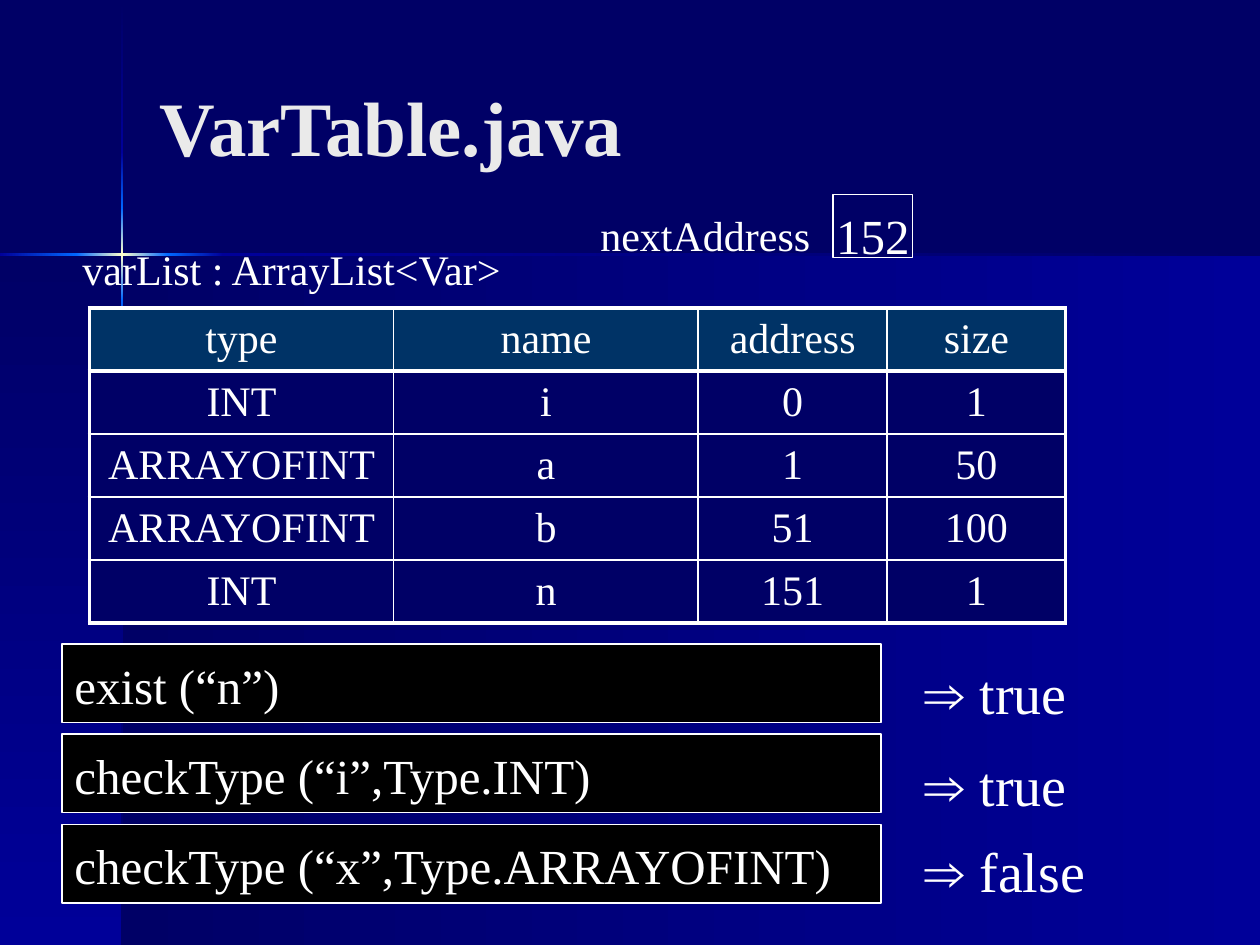
import copy
import itertools

import pptx
import pptx.dml.color
import pptx.enum.shapes
import pptx.enum.text
import pptx.oxml
import pptx.oxml.ns
import pptx.util

Pt = pptx.util.Pt
RGBColor = pptx.dml.color.RGBColor
Align = pptx.enum.text.PP_ALIGN
Anchor = pptx.enum.text.MSO_ANCHOR
RECTANGLE = pptx.enum.shapes.MSO_SHAPE.RECTANGLE

NAVY = RGBColor(0x00, 0x00, 0x66)
BLUE = RGBColor(0x00, 0x00, 0x99)
BRIGHT = RGBColor(0x00, 0x66, 0xFF)
CREAM = RGBColor(0xFF, 0xFF, 0xCC)
TEAL = RGBColor(0x00, 0x33, 0x66)
BLACK = RGBColor(0x00, 0x00, 0x00)
WHITE = RGBColor(0xFF, 0xFF, 0xFF)
SILVER = RGBColor(0xEA, 0xEA, 0xEA)
FONT = "Times New Roman"


def write(frame, text, size, color=WHITE, bold=False, align=Align.LEFT,
          anchor=Anchor.TOP, wrap=True, top=6.6, side=7.2):
    frame.word_wrap = wrap
    frame.auto_size = pptx.enum.text.MSO_AUTO_SIZE.NONE
    frame.vertical_anchor = anchor
    frame.margin_left = frame.margin_right = Pt(side)
    frame.margin_top, frame.margin_bottom = Pt(top), Pt(3.6)
    para = frame.paragraphs[0]
    para.alignment = align
    span = para.add_run()
    span.text = text
    span.font.name, span.font.size, span.font.bold = FONT, Pt(size), bold
    span.font.color.rgb = color


def add_box(left, top, width, height, colors, angle=0):
    """Add a rectangle: one colour and a white outline, or a gradient and none."""
    box = page.shapes.add_shape(RECTANGLE, Pt(left), Pt(top), Pt(width), Pt(height))
    box.shadow.inherit = False
    if len(colors) == 1:
        box.fill.solid()
        box.fill.fore_color.rgb = colors[0]
        box.line.color.rgb = WHITE
        box.line.width = Pt(0.75)
        return box
    box.line.fill.background()
    box.fill.gradient()
    box.fill.gradient_angle = angle
    stop_list = box._element.spPr.find(".//" + pptx.oxml.ns.qn("a:gsLst"))
    for _ in colors[2:]:
        stop_list.append(copy.deepcopy(stop_list[-1]))
    for index, (stop, color) in enumerate(zip(box.fill.gradient_stops, colors)):
        stop.position = index / (len(colors) - 1)
        stop.color.rgb = color
    return box


deck = pptx.Presentation()
deck.slide_width, deck.slide_height = Pt(720), Pt(540)
page = deck.slides.add_slide(deck.slide_layouts[5])
page.background.fill.solid()
page.background.fill.fore_color.rgb = NAVY

# Background panels and the glowing cross where they meet
DOWN = 270
add_box(70, 145.5, 650, 394.5, [NAVY, BLUE])
add_box(0, 145.5, 70, 394.5, [NAVY, BLUE], DOWN)
glow_colors = [[NAVY, BLUE], [BLUE, BRIGHT], [BRIGHT, CREAM, BRIGHT],
               [BRIGHT, BLUE], [BLUE, NAVY]]
column_edges = [0.75, 87, 119, 171.5, 203, 540]
row_edges = [0, 43.5, 96, 127.5, 720]
for (start, end), colors in zip(itertools.pairwise(column_edges), glow_colors):
    add_box(69.2, start, 1.4, end - start, colors, DOWN)
for (start, end), colors in zip(itertools.pairwise(row_edges), glow_colors[1:]):
    add_box(start, 144.8, end - start, 1.4, colors)

title = page.shapes.title
title.left, title.top, title.width, title.height = Pt(84), Pt(24), Pt(594), Pt(78)
write(title.text_frame, "VarTable.java", 44, color=SILVER, bold=True,
      anchor=Anchor.BOTTOM, top=3.6)
page.shapes._spTree.append(title._element)

# Variable table
rows = [
    ["type", "name", "address", "size"],
    ["INT", "i", "0", "1"],
    ["ARRAYOFINT", "a", "1", "50"],
    ["ARRAYOFINT", "b", "51", "100"],
    ["INT", "n", "151", "1"],
]
widths = [174, 174, 108, 102]
last_row, last_column = len(rows) - 1, len(widths) - 1
table = page.shapes.add_table(len(rows), len(widths), Pt(51), Pt(176),
                              Pt(sum(widths)), Pt(36 * len(rows))).table
for column, width in zip(table.columns, widths):
    column.width = Pt(width)
for r, row in enumerate(rows):
    table.rows[r].height = Pt(36)
    for c, text in enumerate(row):
        cell = table.cell(r, c)
        write(cell.text_frame, text, 24, align=Align.CENTER)
        cell.vertical_anchor = Anchor.MIDDLE
        cell.margin_top = cell.margin_bottom = Pt(3.6)
        thick_edges = {"lnL": c == 0, "lnR": c == last_column,
                       "lnT": r <= 1, "lnB": r in (0, last_row)}
        properties = cell._tc.get_or_add_tcPr()
        for edge, thick in thick_edges.items():
            properties.append(pptx.oxml.parse_xml(
                f'<a:{edge} {pptx.oxml.ns.nsdecls("a")} w="{Pt(2.25 if thick else 1)}">'
                f'<a:solidFill><a:srgbClr val="{WHITE}"/></a:solidFill></a:{edge}>'))
        cell.fill.solid()
        cell.fill.fore_color.rgb = TEAL if r == 0 else NAVY

# Next free address and method calls
address_box = add_box(476, 111, 45.5, 36, [NAVY])
write(address_box.text_frame, "152", 28, align=Align.CENTER, side=0)
calls = ["exist (“n”)", "checkType (“i”,Type.INT)", "checkType (“x”,Type.ARRAYOFINT)"]
for index, call in enumerate(calls):
    call_box = add_box(35.5, 368 + 51.5 * index, 468, 45, [BLACK])
    write(call_box.text_frame, call, 28)

labels = [
    ("varList : ArrayList<Var>", 40, 132.5, 261.5, 36, 24),
    ("nextAddress", 336, 113, 135.5, 36, 24),
    ("⇒ true", 521.5, 369.5, 105, 46, 32),
    ("⇒ true", 521.5, 422, 105, 46, 32),
    ("⇒ false", 521.5, 471.5, 116, 46, 32),
]
for text, left, top, width, height, size in labels:
    label = page.shapes.add_textbox(Pt(left), Pt(top), Pt(width), Pt(height))
    write(label.text_frame, text, size, wrap=False)

deck.save("out.pptx")
